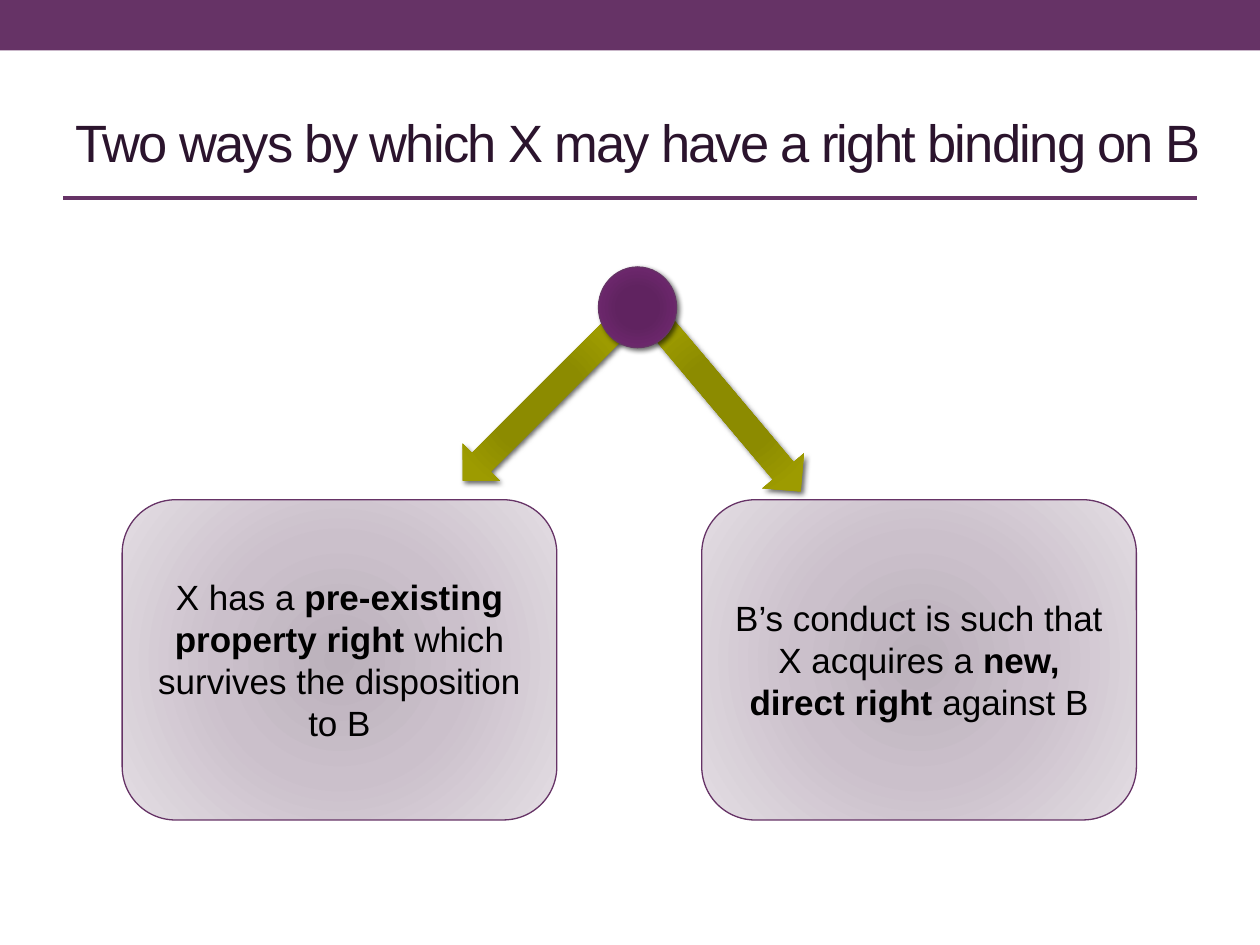
"""Build a slide that splits one idea into two ways of holding a right."""
from pptx import Presentation
from pptx.dml.color import RGBColor
from pptx.enum.shapes import MSO_CONNECTOR, MSO_SHAPE
from pptx.enum.text import MSO_ANCHOR, PP_ALIGN
from pptx.oxml import parse_xml
from pptx.oxml.ns import nsdecls, qn
from pptx.util import Pt

PURPLE = "663366"
PALE_STOPS = [(0, "BBB1BB"), (45, "CBC0CB"), (100, "E3DDE3")]
OLIVE_STOPS = [(0, "8C8B00"), (34, "8C8B00"), (70, "9D9B00"), (100, "A3A101")]
PLUM_STOPS = [(0, "622162"), (34, "602360"), (70, "6B276B"), (100, "663366")]


def color(value):
    """Turn a hex string into a colour."""
    return RGBColor.from_string(value)


def add_shape(slide, kind, left, top, width, height, fill, line=None):
    """Add a preset shape with a plain fill and an optional thin outline."""
    shape = slide.shapes.add_shape(kind, Pt(left), Pt(top), Pt(width), Pt(height))
    shape.shadow.inherit = False
    shape.fill.solid()
    shape.fill.fore_color.rgb = color(fill)
    if line:
        shape.line.color.rgb = color(line)
        shape.line.width = Pt(0.75)
    else:
        shape.line.fill.background()
    return shape


def set_radial_fill(shape, stops):
    """Replace the plain fill by a gradient that spreads from the centre."""
    stop_xml = "".join(
        f'<a:gs pos="{position * 1000}"><a:srgbClr val="{value}"/></a:gs>'
        for position, value in stops
    )
    gradient = parse_xml(
        f'<a:gradFill {nsdecls("a")} rotWithShape="1"><a:gsLst>{stop_xml}</a:gsLst>'
        '<a:path path="circle"><a:fillToRect l="100000" t="100000" r="100000" '
        'b="100000"/></a:path></a:gradFill>'
    )
    properties = shape._element.spPr
    properties.replace(properties.find(qn("a:solidFill")), gradient)


def add_shadow(shape):
    """Give a shape a soft shadow to the lower right."""
    shadow = parse_xml(
        f'<a:outerShdw {nsdecls("a")} blurRad="{Pt(3)}" dist="{Pt(2)}" dir="2700000" '
        'rotWithShape="0"><a:srgbClr val="000000"><a:alpha val="60000"/>'
        "</a:srgbClr></a:outerShdw>"
    )
    shape._element.spPr.find(qn("a:effectLst")).append(shadow)


def add_run(paragraph, text, size, value, bold=False):
    """Add one run of Arial text."""
    run = paragraph.add_run()
    run.text = text
    run.font.name = "Arial"
    run.font.size = Pt(size)
    run.font.bold = bold
    run.font.color.rgb = color(value)
    return run


def add_title(slide, text):
    """Add the title with slightly tightened letters and the rule below it."""
    box = slide.shapes.add_textbox(Pt(36), Pt(41.8), Pt(660.2), Pt(77.8))
    frame = box.text_frame
    frame.word_wrap = True
    frame.vertical_anchor = MSO_ANCHOR.MIDDLE
    run = add_run(frame.paragraphs[0], text, 30, "2B142D")
    run.font._element.set("spc", "-100")
    rule = slide.shapes.add_connector(
        MSO_CONNECTOR.STRAIGHT, Pt(36), Pt(113), Pt(684), Pt(113)
    )
    rule.line.color.rgb = color(PURPLE)
    rule.line.width = Pt(2.08)
    rule._element.spPr.append(parse_xml(f'<a:effectLst {nsdecls("a")}/>'))


def add_way(slide, left, parts):
    """Add a rounded box whose text is given as (text, bold) parts."""
    shape = add_shape(
        slide, MSO_SHAPE.ROUNDED_RECTANGLE, left, 285.6, 248.4, 183, PALE_STOPS[0][1], PURPLE
    )
    set_radial_fill(shape, PALE_STOPS)
    frame = shape.text_frame
    frame.word_wrap = True
    frame.vertical_anchor = MSO_ANCHOR.MIDDLE
    paragraph = frame.paragraphs[0]
    paragraph.alignment = PP_ALIGN.CENTER
    for text, bold in parts:
        add_run(paragraph, text, 20, "000000", bold)


def add_raised(slide, kind, bounds, stops, rotation=0, line=None):
    """Add a gradient shape that casts a shadow."""
    shape = add_shape(slide, kind, *bounds, stops[0][1], line)
    shape.rotation = rotation
    set_radial_fill(shape, stops)
    add_shadow(shape)


def main():
    """Build and save the slide."""
    presentation = Presentation()
    presentation.slide_width, presentation.slide_height = Pt(720), Pt(540)
    slide = presentation.slides.add_slide(presentation.slide_layouts[6])
    add_shape(slide, MSO_SHAPE.RECTANGLE, 0, 0, 720, 28.8, PURPLE)
    add_title(slide, "Two ways by which X may have a right binding on B")
    add_way(slide, 69.8, [
        ("X has a ", False),
        ("pre-existing property right ", True),
        ("which survives the disposition to B", False),
    ])
    add_way(slide, 401, [
        ("B’s conduct is such that X acquires a ", False),
        ("new, direct right ", True),
        ("against B", False),
    ])
    arrow = MSO_SHAPE.RIGHT_ARROW
    add_raised(slide, arrow, (352.8, 216.7, 127.4, 31), OLIVE_STOPS, 49.9)
    add_raised(slide, arrow, (246.2, 216, 123.8, 30.2), OLIVE_STOPS, 135)
    add_raised(slide, MSO_SHAPE.OVAL, (342, 152.6, 44.6, 46.1), PLUM_STOPS, line=PURPLE)
    presentation.save("out.pptx")


if __name__ == "__main__":
    main()
